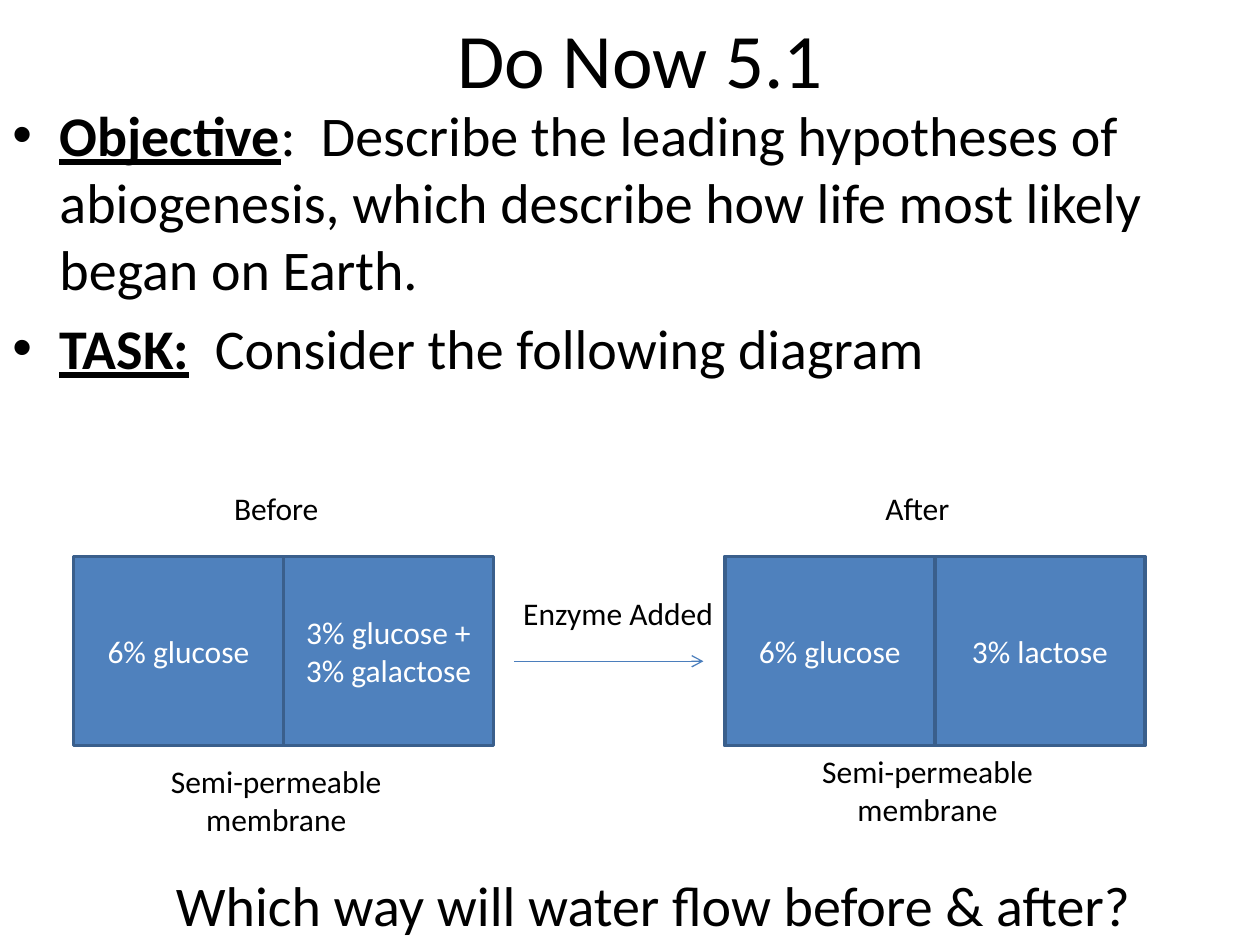
import pptx
import pptx.dml.color
import pptx.enum.shapes
import pptx.enum.text
import pptx.oxml.ns
import pptx.util
from lxml import etree

Cm = pptx.util.Cm
Pt = pptx.util.Pt
RGBColor = pptx.dml.color.RGBColor
PP_ALIGN = pptx.enum.text.PP_ALIGN
MSO_ANCHOR = pptx.enum.text.MSO_ANCHOR
qn = pptx.oxml.ns.qn

BLACK = RGBColor(0x00, 0x00, 0x00)
WHITE = RGBColor(0xFF, 0xFF, 0xFF)
BLUE = RGBColor(0x4F, 0x81, 0xBD)
EDGE = RGBColor(0x3A, 0x5F, 0x8C)
ARROW = RGBColor(0x4B, 0x7E, 0xBC)


def style(p, size, color=BLACK, align=PP_ALIGN.CENTER):
    """Set the font and alignment of a paragraph."""
    p.alignment = align
    p.font.name = "Calibri"
    p.font.size = Pt(size)
    p.font.color.rgb = color


def add_text(s, box, lines, size=18, wrap=False, anchor=MSO_ANCHOR.TOP):
    """Add a text box with one centred paragraph per line."""
    tf = s.shapes.add_textbox(*map(Cm, box)).text_frame
    tf.word_wrap = wrap
    tf.vertical_anchor = anchor
    tf.text = "\n".join(lines)
    for p in tf.paragraphs:
        style(p, size)


def add_instructions(s, box, items):
    """Add bulleted items, each with a bold underlined heading."""
    tf = s.shapes.add_textbox(*map(Cm, box)).text_frame
    tf.word_wrap = True
    for i, (heading, text) in enumerate(items):
        p = tf.paragraphs[0] if i == 0 else tf.add_paragraph()
        style(p, 32, align=PP_ALIGN.LEFT)
        p.space_before = Pt(6.4)
        r = p.add_run()
        r.text = heading
        r.font.bold = r.font.underline = True
        p.add_run().text = text
        pPr = p._p.get_or_add_pPr()
        pPr.set("marL", str(Cm(0.95)))
        pPr.set("indent", str(-Cm(0.95)))
        bullet_font = etree.Element(qn("a:buFont"), typeface="Arial")
        bullet = etree.Element(qn("a:buChar"), char="•")
        pPr.find(qn("a:spcBef")).addnext(bullet_font)
        bullet_font.addnext(bullet)


def add_tank(s, box, title, title_width, solutions, membrane_gap):
    """Add a tank of two chambers with its title and membrane label."""
    x, y, w, h = box
    chamber = w / len(solutions)
    for i, solution in enumerate(solutions):
        sp = s.shapes.add_shape(
            pptx.enum.shapes.MSO_SHAPE.RECTANGLE,
            Cm(x + i * chamber), Cm(y), Cm(chamber), Cm(h))
        sp.shadow.inherit = False
        sp.fill.solid()
        sp.fill.fore_color.rgb = BLUE
        sp.line.color.rgb = EDGE
        sp.line.width = Pt(2)
        tf = sp.text_frame
        tf.word_wrap = True
        tf.vertical_anchor = MSO_ANCHOR.MIDDLE
        tf.text = solution
        style(tf.paragraphs[0], 18, WHITE)
    add_text(s, (x + 2.97, y - 1.48, title_width, 1.03), [title])
    add_text(s, (x + 1.69, y + h + membrane_gap, 4.8, 1.8),
             ["Semi-permeable", "membrane"])


def add_reaction(s, box, label):
    """Add a label over an arrow along the bottom of the box."""
    x, y, w, h = box
    add_text(s, (x, y, w, 1.03), [label], wrap=True)
    line = s.shapes.add_connector(
        pptx.enum.shapes.MSO_CONNECTOR.STRAIGHT,
        Cm(x + 0.21), Cm(y + h), Cm(x + 4.02), Cm(y + h))
    line.line.color.rgb = ARROW
    line.line.width = Pt(0.75)
    etree.SubElement(line.line._get_or_add_ln(), qn("a:tailEnd"), type="arrow")
    etree.SubElement(line._element.spPr, qn("a:effectLst"))


def main():
    """Build the slide and save it."""
    prs = pptx.Presentation()
    prs.slide_width, prs.slide_height = Cm(25.4), Cm(19.05)
    s = prs.slides.add_slide(prs.slide_layouts[6])
    add_text(s, (1.48, 0, 22.86, 2.33), ["Do Now 5.1"], 44, True, MSO_ANCHOR.MIDDLE)
    add_instructions(s, (0, 1.9, 25.4, 15.45), [
        ("Objective", ":  Describe the leading hypotheses of abiogenesis, "
                      "which describe how life most likely began on Earth."),
        ("TASK:", "  Consider the following diagram"),
    ])
    add_tank(s, (1.48, 11.22, 8.47, 3.81), "Before", 2.24,
             ["6% glucose", "3% glucose + 3% galactose"], 0.21)
    add_tank(s, (14.61, 11.22, 8.47, 3.81), "After", 1.83,
             ["6% glucose", "3% lactose"], 0)
    add_reaction(s, (10.16, 11.85, 4.6, 1.48), "Enzyme Added")
    add_text(s, (3.18, 17.42, 19.99, 1.63),
             ["Which way will water flow before & after?"], 32)
    prs.save("out.pptx")


if __name__ == "__main__":
    main()
